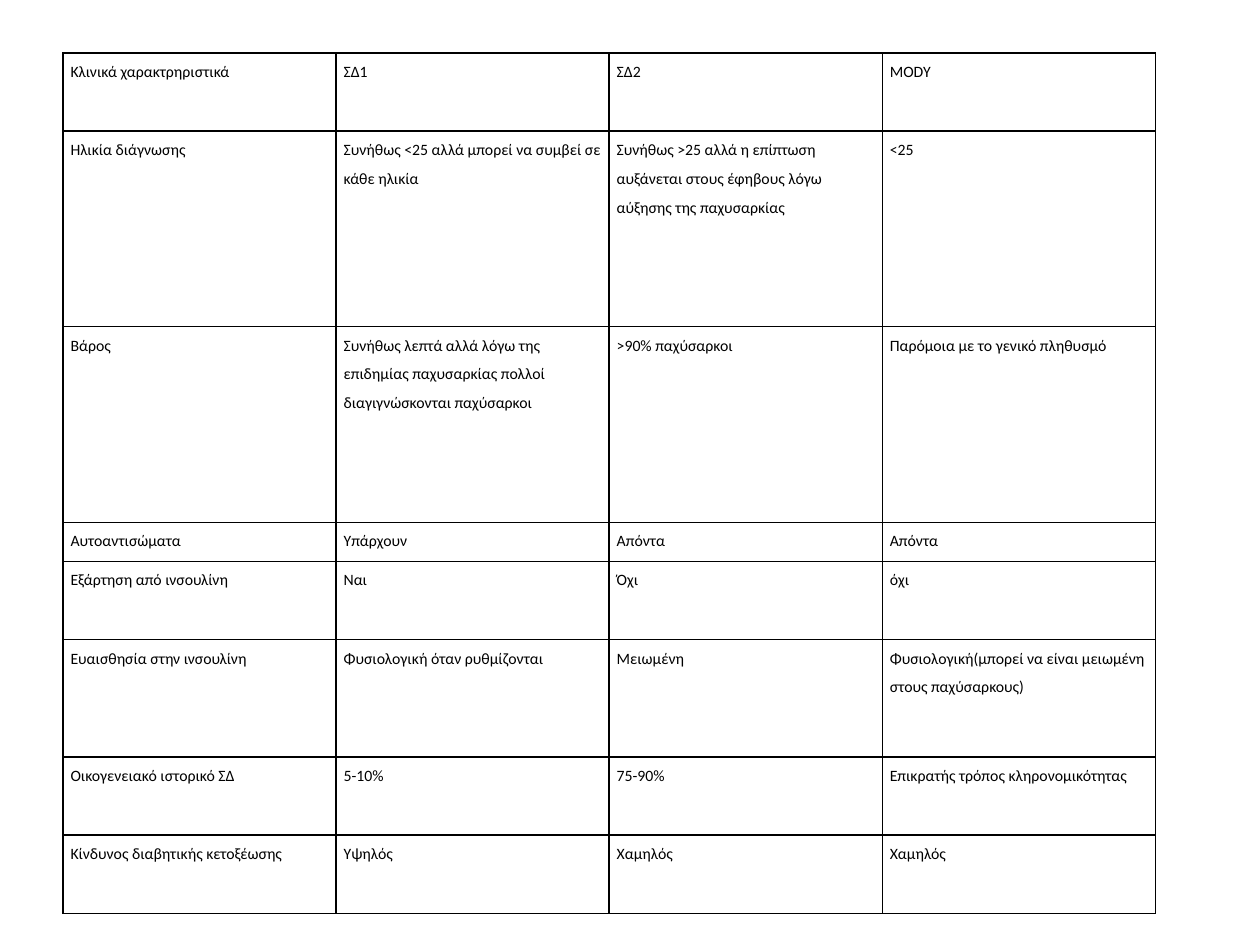
from lxml import etree
from pptx import Presentation
from pptx import util as u
from pptx.dml.color import RGBColor
from pptx.enum import text
from pptx.oxml import ns

BLACK = RGBColor(0, 0, 0)
FONT = "Calibri"

# Each row: height in text lines, then the four cells
ROWS = [
    (2, ["Κλινικά χαρακτρηριστικά", "ΣΔ1", "ΣΔ2", "MODY"]),
    (5, ["Ηλικία διάγνωσης",
         "Συνήθως <25 αλλά μπορεί να συμβεί σε κάθε ηλικία",
         "Συνήθως >25 αλλά η επίπτωση αυξάνεται στους έφηβους λόγω αύξησης της παχυσαρκίας",
         "<25"]),
    (5, ["Βάρος",
         "Συνήθως λεπτά αλλά λόγω της επιδημίας παχυσαρκίας πολλοί διαγιγνώσκονται παχύσαρκοι",
         ">90% παχύσαρκοι",
         "Παρόμοια με το γενικό πληθυσμό"]),
    (1, ["Αυτοαντισώματα", "Υπάρχουν", "Απόντα", "Απόντα"]),
    (2, ["Εξάρτηση από ινσουλίνη", "Ναι", "Όχι", "όχι"]),
    (3, ["Ευαισθησία στην ινσουλίνη", "Φυσιολογική όταν ρυθμίζονται", "Μειωμένη",
         "Φυσιολογική(μπορεί να είναι μειωμένη στους παχύσαρκους)"]),
    (2, ["Οικογενειακό ιστορικό ΣΔ", "5-10%", "75-90%",
         "Επικρατής τρόπος κληρονομικότητας"]),
    (2, ["Κίνδυνος διαβητικής κετοξέωσης", "Υψηλός", "Χαμηλός", "Χαμηλός"]),
]
LEFT, TOP = u.Inches(0.5), u.Inches(0.42)
WIDTH, HEIGHT = u.Inches(8.67), u.Inches(6.83)


def add_borders(cell, color=BLACK, width=u.Pt(1)):
    properties = cell._tc.get_or_add_tcPr()
    for side in ("lnL", "lnR", "lnT", "lnB"):
        line = etree.SubElement(properties, ns.qn(f"a:{side}"), w=str(width))
        fill = etree.SubElement(line, ns.qn("a:solidFill"))
        etree.SubElement(fill, ns.qn("a:srgbClr"), val=str(color))


def write(cell, content, size=9, color=BLACK, spacing=1.5):
    cell.margin_left = cell.margin_right = u.Inches(0.06)
    cell.margin_top = cell.margin_bottom = 0
    cell.vertical_anchor = text.MSO_ANCHOR.TOP
    para = cell.text_frame.paragraphs[0]
    para.line_spacing = spacing
    span = para.add_run()
    span.text = content
    span.font.name = FONT
    span.font.size = u.Pt(size)
    span.font.color.rgb = color


deck = Presentation()
deck.slide_width, deck.slide_height = u.Inches(10), u.Inches(7.5)
page = deck.slides.add_slide(deck.slide_layouts[6])

column_count = len(ROWS[0][1])
table = page.shapes.add_table(len(ROWS), column_count, LEFT, TOP, WIDTH, HEIGHT).table
table.first_row = table.horz_banding = False
for column in table.columns:
    column.width = WIDTH // column_count

line_height = HEIGHT / sum(lines for lines, _ in ROWS)
for row, (lines, contents) in zip(table.rows, ROWS):
    row.height = int(lines * line_height)
    for cell, content in zip(row.cells, contents):
        add_borders(cell)
        cell.fill.background()
        write(cell, content)

deck.save("out.pptx")
